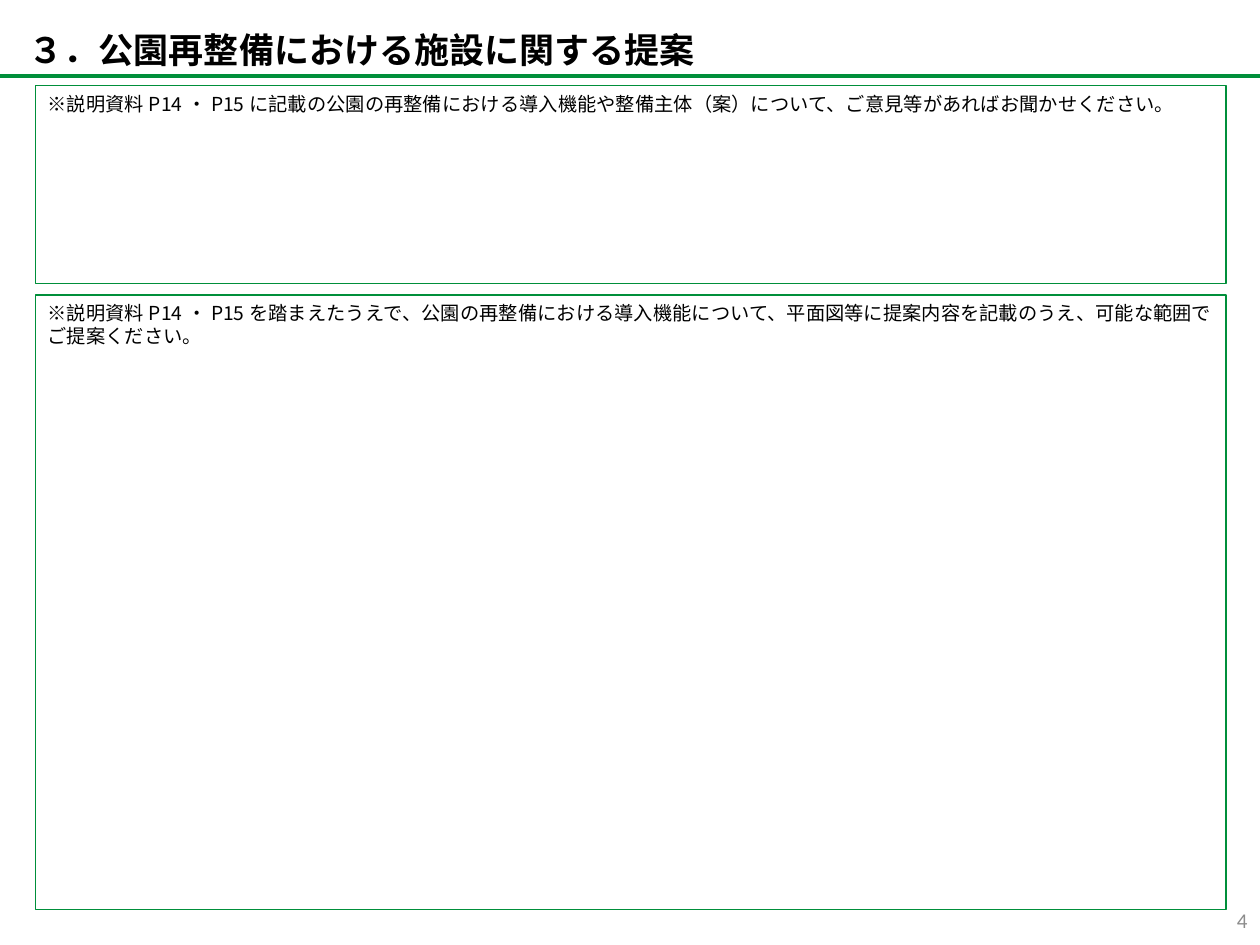
from lxml import etree
from pptx import Presentation
from pptx import util as u
from pptx.dml.color import RGBColor
from pptx.enum import shapes, text
from pptx.oxml import ns

GREEN = RGBColor(0x00, 0x8F, 0x3A)
BLACK = RGBColor(0x00, 0x00, 0x00)
GRAY = RGBColor(0x8C, 0x8C, 0x8C)
JAPANESE_FONT = "Noto Sans CJK JP"

SLIDE_WIDTH = 10
BOX_LEFT, BOX_WIDTH = 0.28, 9.45


class FormSlide:
    """Holds the form's style and the slide being filled."""

    title_font = {"name": "Arial", "size": u.Pt(20), "bold": True}
    request_font = {"name": JAPANESE_FONT, "size": u.Pt(11)}
    number_font = {"name": "Calibri", "size": u.Pt(12)}

    def __init__(self, prs):
        self.slide = prs.slides.add_slide(prs.slide_layouts[6])

    def set_words(self, frame, words, font, color=BLACK, **paragraph_format):
        frame.word_wrap = True
        paragraph = frame.paragraphs[0]
        for key, value in paragraph_format.items():
            setattr(paragraph, key, value)
        run = paragraph.add_run()
        run.text = words
        for key, value in font.items():
            setattr(run.font, key, value)
        run.font.color.rgb = color
        # East Asian typeface for the Japanese characters
        latin = run._r.rPr.find(ns.qn("a:latin"))
        east_asian = etree.Element(ns.qn("a:ea"), typeface=JAPANESE_FONT)
        latin.addnext(east_asian)

    def label(self, left, top, width, height, words, font, color=BLACK,
              anchor=text.MSO_ANCHOR.TOP, **paragraph_format):
        box = self.slide.shapes.add_textbox(
            *map(u.Inches, (left, top, width, height)))
        box.text_frame.vertical_anchor = anchor
        self.set_words(box.text_frame, words, font, color, **paragraph_format)

    def answer_box(self, top, height, request):
        box = self.slide.shapes.add_shape(
            shapes.MSO_SHAPE.RECTANGLE,
            *map(u.Inches, (BOX_LEFT, top, BOX_WIDTH, height)))
        box.shadow.inherit = False
        box.fill.background()
        box.line.color.rgb = GREEN
        box.line.width = u.Pt(0.75)
        box.text_frame.vertical_anchor = text.MSO_ANCHOR.TOP
        self.set_words(box.text_frame, request, self.request_font,
                       alignment=text.PP_ALIGN.LEFT)

    def rule(self, top):
        line = self.slide.shapes.add_connector(
            shapes.MSO_CONNECTOR.STRAIGHT,
            *map(u.Inches, (0, top, SLIDE_WIDTH, top)))
        line.line.color.rgb = GREEN
        line.line.width = u.Pt(2.25)
        etree.SubElement(line._element.spPr, ns.qn("a:effectLst"))


def main():
    prs = Presentation()
    prs.slide_width = u.Inches(SLIDE_WIDTH)
    prs.slide_height = u.Inches(7.5)
    form = FormSlide(prs)

    # Proposal area
    form.answer_box(2.34, 4.88, "※説明資料P14・P15を踏まえたうえで、公園の再整備における導入機能について、"
                    "平面図等に提案内容を記載のうえ、可能な範囲でご提案ください。")

    # Heading
    form.rule(0.6)
    form.label(0.13, 0.11, 6.43, 0.45, "３．公園再整備における施設に関する提案",
               form.title_font, line_spacing=1.2)

    # Page number
    form.label(7.67, 7.1, 2.33, 0.4, "4", form.number_font, GRAY,
               text.MSO_ANCHOR.MIDDLE, alignment=text.PP_ALIGN.RIGHT)

    # Opinion area
    form.answer_box(0.68, 1.57, "※説明資料P14・P15に記載の公園の再整備における導入機能や整備主体（案）について、"
                    "ご意見等があればお聞かせください。")

    prs.save("out.pptx")


if __name__ == "__main__":
    main()
